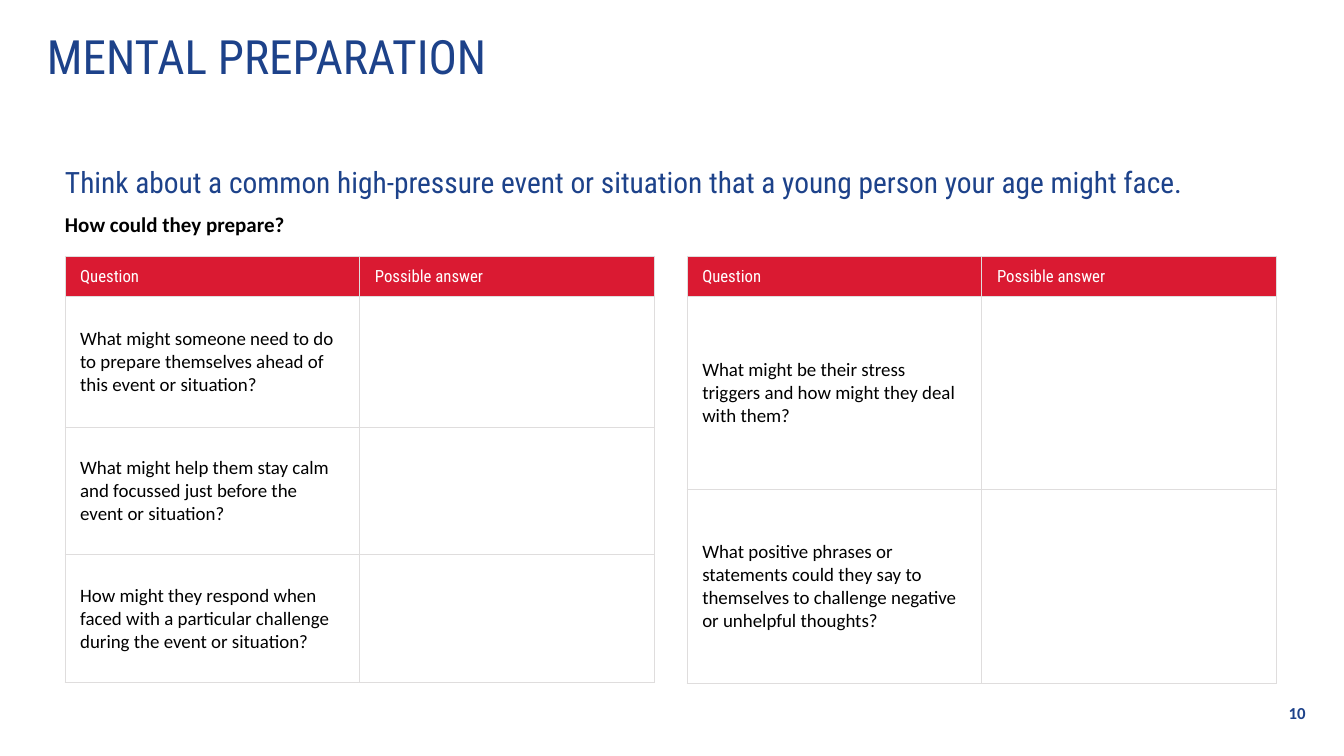
from pptx import Presentation
from pptx.dml.color import RGBColor
from pptx.enum.text import MSO_ANCHOR as Anchor, MSO_AUTO_SIZE as AutoSize, PP_ALIGN as Align
from pptx.oxml import parse_xml
from pptx.oxml.ns import nsdecls
from pptx.util import Inches, Pt

BLUE = RGBColor(0x1D, 0x42, 0x8A)
RED = RGBColor(0xDA, 0x1A, 0x32)
GREY = RGBColor(0xDF, 0xDD, 0xDD)
WHITE = RGBColor(0xFF, 0xFF, 0xFF)
BLACK = RGBColor(0x00, 0x00, 0x00)

HEADING = "Roboto Condensed"
BODY = "Calibri"
TITLE_FONT = {"name": HEADING, "size": Pt(45), "bold": False, "color": BLUE}
PROMPT_FONT = {"name": HEADING, "size": Pt(28), "bold": False, "color": BLUE}
SUBPROMPT_FONT = {"name": BODY, "size": Pt(20), "bold": True, "color": BLACK}
NUMBER_FONT = {"name": BODY, "size": Pt(16), "bold": True, "color": BLUE}
HEADER_FONT = {"name": HEADING, "size": Pt(16), "bold": False, "color": WHITE}
QUESTION_FONT = {"name": BODY, "size": Pt(18), "bold": False, "color": BLACK}

SIDES = ("left", "top", "right", "bottom")
HEADER_INSETS = (0.2, 0, 0.08, 0)
QUESTION_INSETS = (0.2, 0.2, 0.2, 0.2)
HEADER_HEIGHT = 0.53
HEADERS = ("Question", "Possible answer")

BEFORE_QUESTIONS = (
    ("What might someone need to do to prepare themselves ahead of this event or situation? ", 1.73),
    ("What might help them stay calm and focussed just before the event or situation?", 1.69),
    ("How might they respond when faced with a particular challenge during the event or situation? ", 1.69),
)
COPING_QUESTIONS = (
    ("What might be their stress triggers and how might they deal with them? ", 2.56),
    ("What positive phrases or statements could they say to themselves to challenge negative or unhelpful thoughts? ", 2.56),
)


def style(font, values):
    """Apply a dict of format values to a font."""
    for key, value in values.items():
        if key == "color":
            font.color.rgb = value
        else:
            setattr(font, key, value)


def set_insets(target, insets):
    """Set the four margins of a text frame or cell, in inches."""
    for side, inset in zip(SIDES, insets):
        setattr(target, f"margin_{side}", Inches(inset))


def place(shape, box):
    """Move a shape to a box given in inches."""
    for key, value in zip(("left", "top", "width", "height"), box):
        setattr(shape, key, Inches(value))


def add_title(slide, box):
    """Fill the title placeholder."""
    title = slide.shapes.title
    place(title, box)
    frame = title.text_frame
    frame.text = "MENTAL PREPARATION"
    frame.auto_size = AutoSize.NONE
    frame.vertical_anchor = Anchor.MIDDLE
    set_insets(frame, (0, 0, 0, 0))
    heading = frame.paragraphs[0]
    heading.alignment = Align.LEFT
    heading.line_spacing = 0.9
    style(heading.runs[0].font, TITLE_FONT)


def add_prompt(slide, box):
    """Fill the body placeholder with the task and its question."""
    prompt = slide.placeholders[1]
    place(prompt, box)
    frame = prompt.text_frame
    frame.text = (
        "Think about a common high-pressure event or situation that a young person your age might face.\n"
        "How could they prepare? "
    )
    frame.auto_size = AutoSize.NONE
    frame.vertical_anchor = Anchor.TOP
    set_insets(frame, (0, 0, 0, 0))
    for index, (line, values) in enumerate(zip(frame.paragraphs, (PROMPT_FONT, SUBPROMPT_FONT))):
        properties = line._p.get_or_add_pPr()
        properties.set("marL", "0")
        properties.set("indent", "0")
        properties.append(parse_xml(f"<a:buNone {nsdecls('a')}/>"))
        line.space_before = Pt(6 if index else 0)
        line.space_after = Pt(6)
        style(line.runs[0].font, values)


def set_borders(cell):
    """Draw a thin grey line on all four sides of a cell."""
    properties = cell._tc.get_or_add_tcPr()
    for edge in "LRTB":
        properties.append(parse_xml(
            f'<a:ln{edge} {nsdecls("a")} w="{Pt(1)}"><a:solidFill>'
            f'<a:srgbClr val="{GREY}"/></a:solidFill></a:ln{edge}>'
        ))


def fill_cell(cell, text, values, insets):
    """Write and format the text of a cell."""
    set_insets(cell, insets)
    cell.vertical_anchor = Anchor.MIDDLE
    cell.text = text
    style(cell.text_frame.paragraphs[0].runs[0].font, values)


def add_question_table(slide, box, questions):
    """Add a table of questions with room for answers."""
    frame = slide.shapes.add_table(len(questions) + 1, len(HEADERS), *map(Inches, box))
    table = frame.table
    table.horz_banding = False
    heights = (HEADER_HEIGHT, *(height for _, height in questions))
    for row, height in zip(table.rows, heights):
        row.height = Inches(height)
    for cell in table.iter_cells():
        set_borders(cell)
        cell.fill.background()
    for column, header in enumerate(HEADERS):
        cell = table.cell(0, column)
        cell.fill.solid()
        cell.fill.fore_color.rgb = RED
        fill_cell(cell, header, HEADER_FONT, HEADER_INSETS)
    for row, (question, _) in enumerate(questions, 1):
        fill_cell(table.cell(row, 0), question, QUESTION_FONT, QUESTION_INSETS)


def add_page_number(slide, box):
    """Add the page number at the bottom right."""
    frame = slide.shapes.add_textbox(*map(Inches, box)).text_frame
    frame.word_wrap = True
    frame.vertical_anchor = Anchor.MIDDLE
    frame.text = "10"
    number = frame.paragraphs[0]
    number.alignment = Align.RIGHT
    style(number.runs[0].font, NUMBER_FONT)


def main():
    """Build the slide and save it."""
    deck = Presentation()
    deck.slide_width, deck.slide_height = Inches(17.78), Inches(10)
    slide = deck.slides.add_slide(deck.slide_layouts[1])
    add_title(slide, (0.62, 0.39, 16.54, 0.79))
    add_prompt(slide, (0.86, 2.17, 16.02, 0.83))
    add_page_number(slide, (16.38, 9.17, 0.99, 0.53))
    for left, questions in ((0.86, BEFORE_QUESTIONS), (9.09, COPING_QUESTIONS)):
        add_question_table(slide, (left, 3.39, 7.8, 5.65), questions)
    deck.save("out.pptx")


if __name__ == "__main__":
    main()
